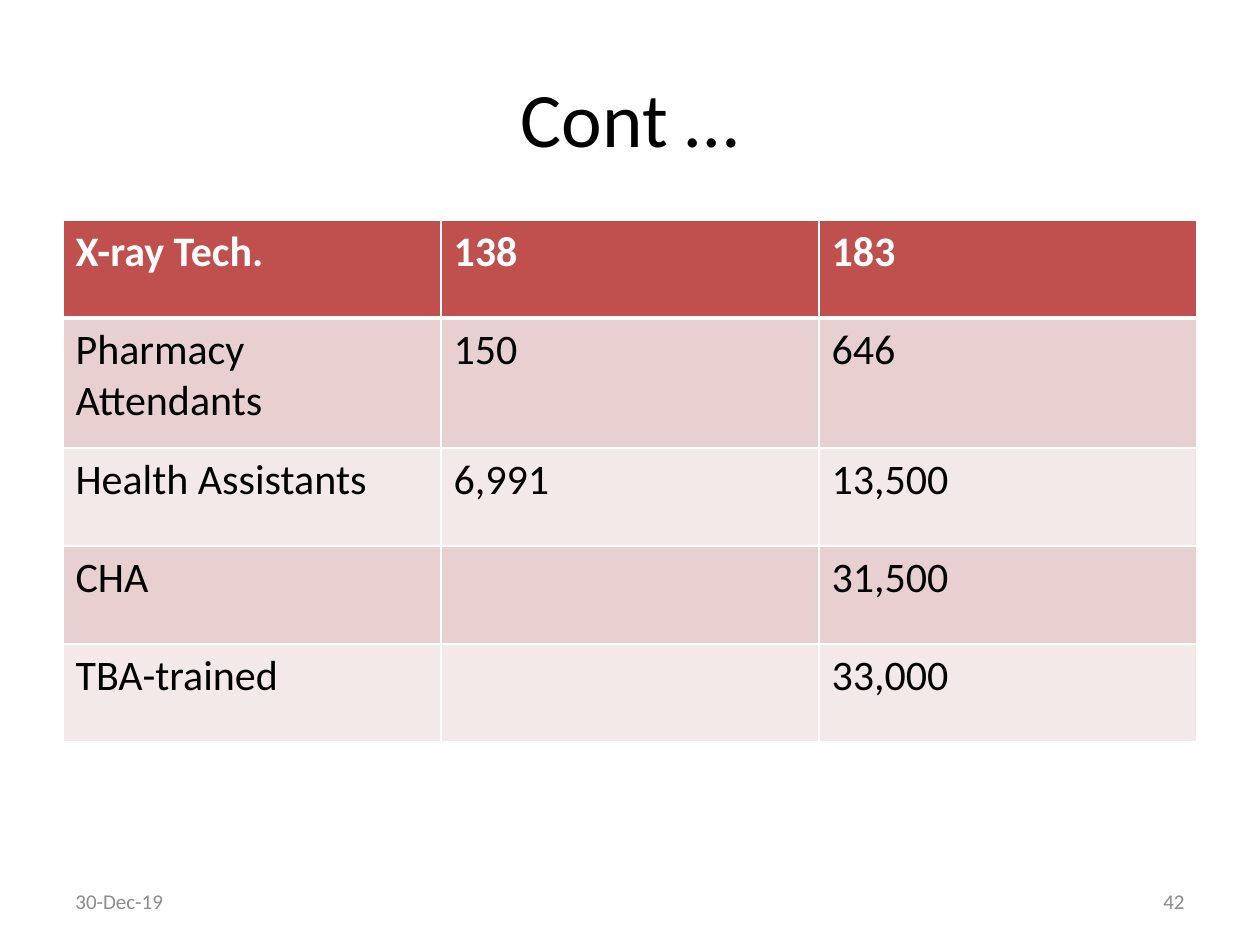
import dataclasses
import typing

import lxml.etree
import pptx
import pptx.dml.color
import pptx.enum.text
import pptx.oxml.ns
import pptx.util

SCALE = 914400 / 126
INK = {"white": "FFFFFF", "black": "000000", "gray": "8C8C8C",
       "head": "C0504D", "dark": "E8D0D0", "light": "F4E9E9"}
ALIGN = pptx.enum.text.PP_ALIGN
MIDDLE = pptx.enum.text.MSO_ANCHOR.MIDDLE

ROWS = [
    ("X-ray Tech.", "138", "183"),
    ("Pharmacy Attendants", "150", "646"),
    ("Health Assistants", "6,991", "13,500"),
    ("CHA", "", "31,500"),
    ("TBA-trained", "", "33,000"),
]
TALL = [98, 130, 98, 98, 98]
WIDE = 378


@dataclasses.dataclass
class Label:
    text: str
    left: int
    top: int
    width: int
    height: int
    size: int
    ink: str
    align: typing.Any


LABELS = [
    Label("Cont …", 63, 38, 1134, 157, 44, "black", ALIGN.CENTER),
    Label("30-Dec-19", 63, 876, 294, 50, 12, "gray", ALIGN.LEFT),
    Label("42", 903, 876, 294, 50, 12, "gray", ALIGN.RIGHT),
]


def px(count: int) -> int:
    return round(count * SCALE)


def color(name: str) -> pptx.dml.color.RGBColor:
    return pptx.dml.color.RGBColor.from_string(INK[name])


def style(font: typing.Any, size: int, ink: str, bold: bool = False) -> None:
    form = {"name": "Calibri", "size": pptx.util.Pt(size), "bold": bold}
    for key, value in form.items():
        setattr(font, key, value)
    font.color.rgb = color(ink)


def write(slide: typing.Any, label: Label) -> None:
    box = slide.shapes.add_textbox(
        *map(px, (label.left, label.top, label.width, label.height)))
    frame = box.text_frame
    for key, value in {"word_wrap": True, "vertical_anchor": MIDDLE}.items():
        setattr(frame, key, value)
    line = frame.paragraphs[0]
    line.text = label.text
    line.alignment = label.align
    style(line.font, label.size, label.ink)


def edge(cell: typing.Any, side: str, points: int) -> None:
    name = pptx.oxml.ns.qn
    rule = lxml.etree.SubElement(
        cell._tc.get_or_add_tcPr(), name(f"a:ln{side}"),
        w=str(pptx.util.Pt(points)))
    fill = lxml.etree.SubElement(rule, name("a:solidFill"))
    lxml.etree.SubElement(fill, name("a:srgbClr"), val=INK["white"])


def paint(cell: typing.Any, text: str, row: int) -> None:
    head = row == 0
    thick = {(0, "B"), (1, "T")}
    for side in "LRTB":
        edge(cell, side, 3 if (row, side) in thick else 1)
    cell.fill.solid()
    cell.fill.fore_color.rgb = color(
        "head" if head else "dark" if row % 2 else "light")
    cell.text = text
    style(cell.text_frame.paragraphs[0].font, 24,
          "white" if head else "black", head)


def grid(slide: typing.Any) -> None:
    cols = len(ROWS[0])
    table = slide.shapes.add_table(
        len(ROWS), cols, px(63), px(220), px(WIDE * cols), px(sum(TALL))).table
    for col in table.columns:
        col.width = px(WIDE)
    for row, texts in enumerate(ROWS):
        table.rows[row].height = px(TALL[row])
        for col, text in enumerate(texts):
            paint(table.cell(row, col), text, row)


def main() -> None:
    deck = pptx.Presentation()
    deck.slide_width, deck.slide_height = px(1260), px(945)
    slide = deck.slides.add_slide(deck.slide_layouts[6])
    grid(slide)
    for label in LABELS:
        write(slide, label)
    deck.save("out.pptx")


if __name__ == "__main__":
    main()
